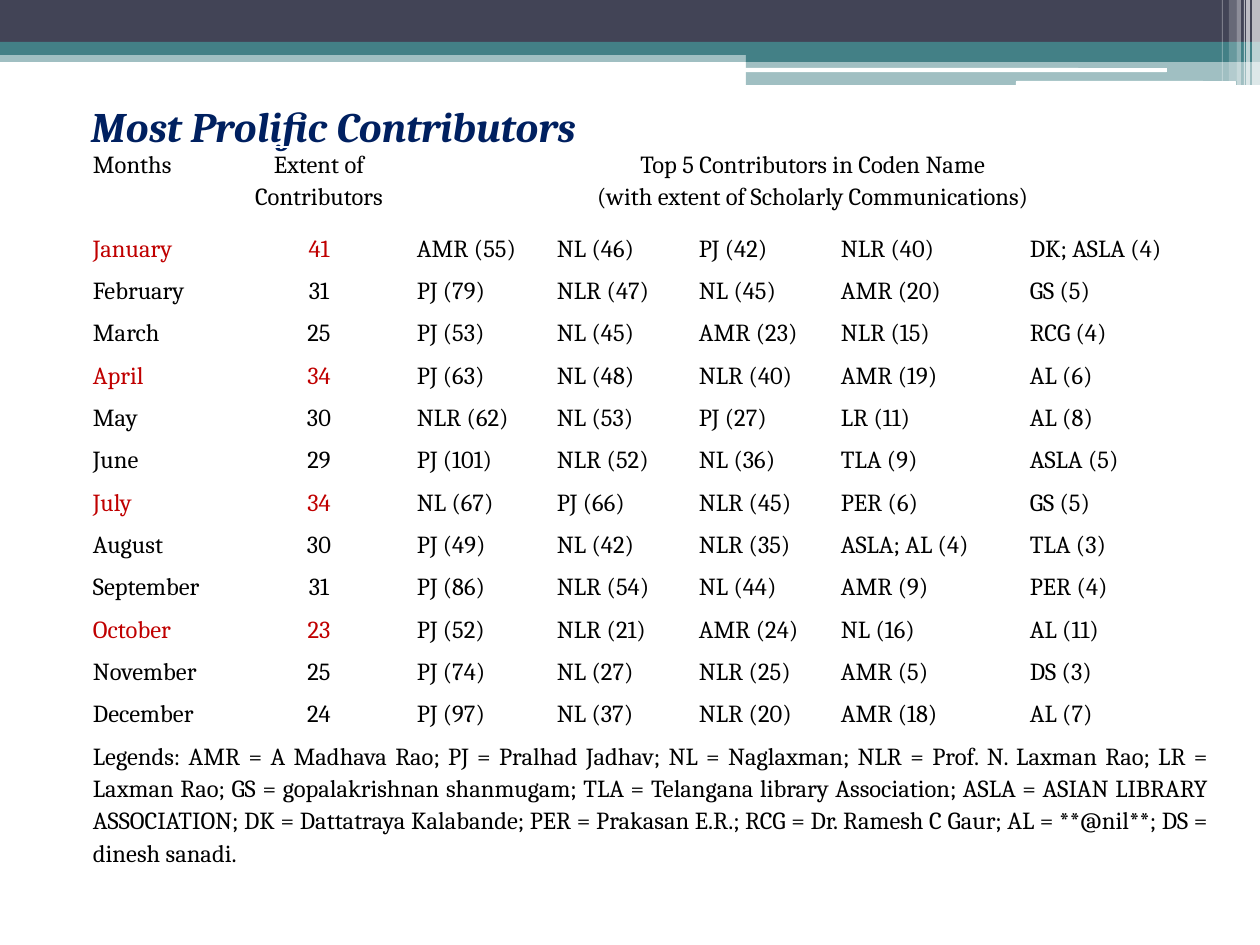
from lxml.etree import SubElement
from pptx import Presentation
from pptx.dml.color import RGBColor
from pptx.enum.shapes import MSO_SHAPE
from pptx.enum.text import MSO_ANCHOR, MSO_AUTO_SIZE, PP_ALIGN
from pptx.oxml.ns import qn
from pptx.util import Emu, Pt

WHITE = RGBColor(0xFF, 0xFF, 0xFF)
BLACK = RGBColor(0x00, 0x00, 0x00)
SLATE = RGBColor(0x42, 0x44, 0x56)
TEAL = RGBColor(0x43, 0x80, 0x86)
NAVY = RGBColor(0x00, 0x20, 0x60)
RED = RGBColor(0xC0, 0x00, 0x00)

# left, top, width, height, colour, opacity in percent
BANDS = [
    (0, 50, 1260, 12, TEAL, 50),
    (0, 0, 1260, 43, SLATE, 100),
    (0, 42, 1260, 13, TEAL, 100),
    (746, 49, 514, 13, TEAL, 100),
    (746, 61, 514, 24, TEAL, 50),
]
BARS = [(745, 68, 422, 4), (1016, 81, 220, 5)]
# left, width, height, opacity in percent
STRIPES = [
    (1252, 8, 85, 65),
    (1246, 4, 85, 65),
    (1244, 1, 85, 60),
    (1237, 4, 85, 40),
    (1229, 8, 81, 20),
    (1222, 1, 81, 30),
]

WIDTHS = [146, 178, 140, 142, 142, 189, 197]
HEAD = ["Months", "Extent of Contributors",
        "Top 5 Contributors in Coden Name\n"
        "(with extent of Scholarly Communications)"]
MONTHS = """\
January|41|AMR (55)|NL (46)|PJ (42)|NLR (40)|DK; ASLA (4)
February|31|PJ (79)|NLR (47)|NL (45)|AMR (20)|GS (5)
March|25|PJ (53)|NL (45)|AMR (23)|NLR (15)|RCG (4)
April|34|PJ (63)|NL (48)|NLR (40)|AMR (19)|AL (6)
May|30|NLR (62)|NL (53)|PJ (27)|LR (11)|AL (8)
June|29|PJ (101)|NLR (52)|NL (36)|TLA (9)|ASLA (5)
July|34|NL (67)|PJ (66)|NLR (45)|PER (6)|GS (5)
August|30|PJ (49)|NL (42)|NLR (35)|ASLA; AL (4)|TLA (3)
September|31|PJ (86)|NLR (54)|NL (44)|AMR (9)|PER (4)
October|23|PJ (52)|NLR (21)|AMR (24)|NL (16)|AL (11)
November|25|PJ (74)|NL (27)|NLR (25)|AMR (5)|DS (3)
December|24|PJ (97)|NL (37)|NLR (20)|AMR (18)|AL (7)"""
PEAKS = {"January", "April", "July", "October"}
LEGEND = (
    "Legends: AMR = A Madhava Rao; PJ = Pralhad Jadhav; NL = Naglaxman; "
    "NLR = Prof. N. Laxman Rao; LR = Laxman Rao; GS = gopalakrishnan shanmugam; "
    "TLA = Telangana library Association; ASLA = ASIAN LIBRARY ASSOCIATION; "
    "DK = Dattatraya Kalabande; PER = Prakasan E.R.; RCG = Dr. Ramesh C Gaur; "
    "AL = **@nil**; DS = dinesh sanadi."
)


def px(n):
    return Emu(round(n * 914400 / 126))


def put(thing, values):
    """Set each attribute named in values."""
    for name, value in values.items():
        setattr(thing, name, value)


def style(frame, font, para):
    """Give every paragraph of a text frame its font and layout."""
    for line in frame.paragraphs:
        put(line, para)
        for run in line.runs:
            put(run.font, {k: v for k, v in font.items() if k != "color"})
            run.font.color.rgb = font["color"]


def block(slide, box, color, alpha=100, kind=MSO_SHAPE.RECTANGLE):
    shape = slide.shapes.add_shape(kind, *map(px, box))
    shape.shadow.inherit = False
    shape.line.fill.background()
    shape.fill.solid()
    shape.fill.fore_color.rgb = color
    if alpha < 100:
        tint = shape._element.spPr.find(".//" + qn("a:srgbClr"))
        SubElement(tint, qn("a:alpha"), val=str(alpha * 1000))


def banner(slide, left, top):
    for x, y, w, h, color, alpha in BANDS:
        block(slide, (left + x, top + y, w, h), color, alpha)
    for x, y, w, h in BARS:
        block(slide, (left + x, top + y, w, h), WHITE,
              kind=MSO_SHAPE.ROUNDED_RECTANGLE)
    for x, w, h, alpha in STRIPES:
        block(slide, (left + x, top, w, h), WHITE, alpha)


def heading(slide, left, top, width, height):
    title = slide.shapes.title
    put(title, {"left": px(left), "top": px(top),
                "width": px(width), "height": px(height)})
    frame = title.text_frame
    frame.text = "Most Prolific Contributors"
    put(frame, {"margin_left": px(28), "margin_top": px(6),
                "word_wrap": True, "auto_size": MSO_AUTO_SIZE.NONE,
                "vertical_anchor": MSO_ANCHOR.TOP})
    style(frame, {"name": "Cambria", "size": Pt(24), "bold": True,
                  "italic": True, "color": NAVY},
          {"alignment": PP_ALIGN.JUSTIFY})


def write(cell, text, align, color=BLACK):
    cell.text = text
    cell.fill.background()
    put(cell, {"margin_left": px(9), "margin_right": px(9),
               "margin_top": 0, "margin_bottom": 0,
               "vertical_anchor": MSO_ANCHOR.TOP})
    style(cell.text_frame,
          {"name": "Cambria", "size": Pt(14), "color": color},
          {"alignment": align, "line_spacing": 1.15})


def ranking(slide, left, top, width, height):
    """Table of months: header row, one row a month, legend row."""
    months = [line.split("|") for line in MONTHS.splitlines()]
    rows, cols = len(months) + 2, len(WIDTHS)
    grid = slide.shapes.add_table(
        rows, cols, *map(px, (left, top, width, height))).table
    put(grid, {"first_row": False, "horz_banding": False})
    for col, w in zip(grid.columns, WIDTHS):
        col.width = px(w)
    head, foot = 84, 152
    for row in grid.rows:
        row.height = px((height - head - foot) / len(months))
    grid.rows[0].height = px(head)
    grid.rows[rows - 1].height = px(foot)

    aligns = [PP_ALIGN.LEFT, PP_ALIGN.CENTER] + [PP_ALIGN.LEFT] * 5
    grid.cell(0, 2).merge(grid.cell(0, cols - 1))
    grid.cell(rows - 1, 0).merge(grid.cell(rows - 1, cols - 1))
    for c, text in enumerate(HEAD):
        write(grid.cell(0, c), text, PP_ALIGN.CENTER if c else PP_ALIGN.LEFT)
    for r, values in enumerate(months, 1):
        for c, text in enumerate(values):
            peak = c < 2 and values[0] in PEAKS
            write(grid.cell(r, c), text, aligns[c], RED if peak else BLACK)
    write(grid.cell(rows - 1, 0), LEGEND, PP_ALIGN.JUSTIFY)


def main():
    deck = Presentation()
    put(deck, {"slide_width": px(1260), "slide_height": px(945)})
    slide = deck.slides.add_slide(deck.slide_layouts[5])
    banner(slide, 0, 0)
    heading(slide, 63, 94, 1134, 69)
    ranking(slide, 84, 147, 1134, 744)
    deck.save("out.pptx")


if __name__ == "__main__":
    main()
